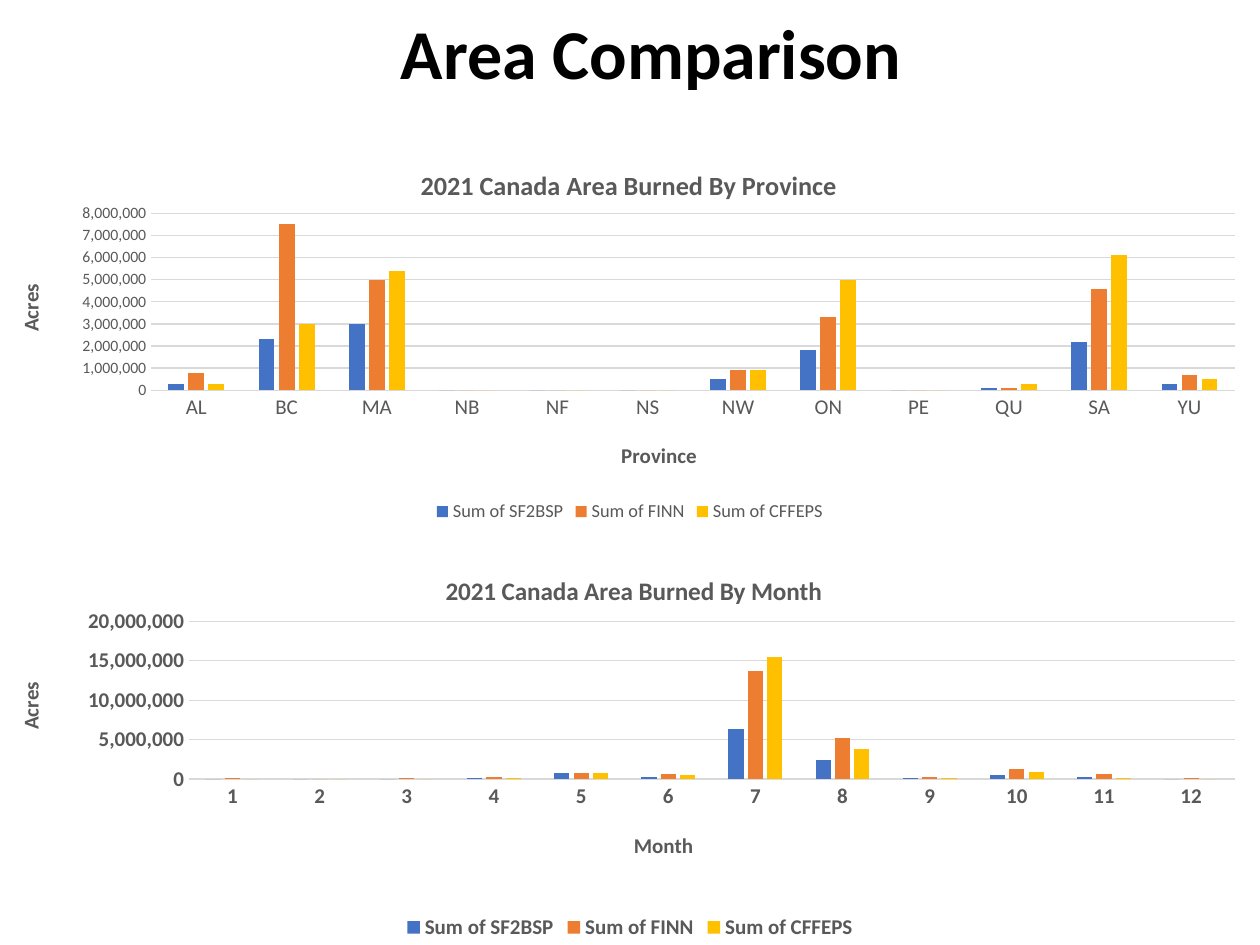
"""Build a slide comparing burned area by province and by month."""
from lxml import etree
from pptx import Presentation
from pptx import util as u
from pptx.chart import data as chart_data
from pptx.dml.color import RGBColor
from pptx.enum import chart as charts, text
from pptx.oxml.ns import qn

THEME = {
    "font": "Calibri", "black": "000000", "ink": "595959", "line": "D9D9D9",
    "series": ["4472C4", "ED7D31", "FFC000"],
    "title": 40, "rule": 0.75,
}
HEADING = "Area Comparison"
SERIES = ["Sum of SF2BSP", "Sum of FINN", "Sum of CFFEPS"]
UNIT = 100000

CHARTS = [
    {
        "title": "2021 Canada Area Burned By Province", "category": "Province",
        "labels": ["AL", "BC", "MA", "NB", "NF", "NS", "NW", "ON", "PE", "QU", "SA", "YU"],
        "values": [
            [3, 23, 30, 0, 0, 0, 5, 18, 0, 1, 22, 3],
            [8, 75, 50, 0, 0, 0, 9, 33, 0, 1, 46, 7],
            [3, 30, 54, 0, 0, 0, 9, 50, 0, 3, 61, 5],
        ],
        "top": 1.07, "height": 3.12, "step": 1000000, "maximum": 8000000,
        "sizes": {"title": 15, "axis": 12, "category": 12, "value": 9, "legend": 10.5},
        "bold": False,
        "plot": (0.12, 0.2, 0.86, 0.45),
        "title_at": (0.33, 0.07), "category_at": (0.49, 0.77), "value_at": (0.01, 0.37),
    },
    {
        "title": "2021 Canada Area Burned By Month", "category": "Month",
        "labels": [str(month) for month in range(1, 13)],
        "values": [
            [0, 0, 0, 1, 7, 3, 63, 24, 1, 5, 2, 0],
            [1, 0, 1, 2, 7, 6, 137, 52, 3, 13, 6, 1],
            [0, 0, 0, 1, 7, 5, 155, 38, 1, 9, 1, 0],
        ],
        "top": 4.29, "height": 3.21, "step": 5000000, "maximum": 20000000,
        "sizes": {"title": 14.4, "axis": 12, "category": 12, "value": 12, "legend": 12},
        "bold": True,
        "plot": (0.15, 0.2, 0.83, 0.39),
        "title_at": (0.35, 0.07), "category_at": (0.5, 0.71), "value_at": (0.01, 0.34),
    },
]


def style_font(font, size, bold, color=THEME["ink"]):
    font.name, font.size, font.bold = THEME["font"], u.Pt(size), bold
    font.color.rgb = RGBColor.from_string(color)


def style_line(line):
    line.color.rgb = RGBColor.from_string(THEME["line"])
    line.width = u.Pt(THEME["rule"])


def place(element, position, index):
    for old in element.findall(qn("c:layout")):
        element.remove(old)
    layout = etree.Element(qn("c:layout"))
    manual = etree.SubElement(layout, qn("c:manualLayout"))
    settings = [("xMode", "edge"), ("yMode", "edge"), *zip("xywh", position)]
    if len(position) == 4:
        settings.insert(0, ("layoutTarget", "inner"))
    for tag, value in settings:
        etree.SubElement(manual, qn("c:" + tag)).set("val", str(value))
    element.insert(index, layout)


def add_title(owner, wording, size, position):
    title = owner.chart_title if hasattr(owner, "chart_title") else owner.axis_title
    title.text_frame.text = wording
    style_font(title.text_frame.paragraphs[0].runs[0].font, size, True)
    element = title.format.line and title._element
    place(element, position, 1)
    return element


def add_column_chart(page, width, info):
    sizes, bold = info["sizes"], info["bold"]
    data = chart_data.CategoryChartData(number_format="#,##0")
    data.categories = info["labels"]
    for name, values in zip(SERIES, info["values"]):
        data.add_series(name, [value * UNIT for value in values])
    chart = page.shapes.add_chart(
        charts.XL_CHART_TYPE.COLUMN_CLUSTERED, 0, u.Inches(info["top"]),
        width, u.Inches(info["height"]), data).chart
    style_font(chart.font, sizes["legend"], bold)

    plot = chart.plots[0]
    plot.gap_width, plot.overlap, plot.vary_by_categories = 219, -27, False
    for series, color in zip(plot.series, THEME["series"]):
        series.format.fill.solid()
        series.format.fill.fore_color.rgb = RGBColor.from_string(color)

    across, upward = chart.category_axis, chart.value_axis
    for axis, size in ((across, sizes["category"]), (upward, sizes["value"])):
        axis.major_tick_mark = axis.minor_tick_mark = charts.XL_TICK_MARK.NONE
        style_font(axis.tick_labels.font, size, bold)
    style_line(across.format.line)
    upward.format.line.fill.background()
    upward.has_major_gridlines = True
    style_line(upward.major_gridlines.format.line)
    upward.minimum_scale, upward.maximum_scale = 0, info["maximum"]
    upward.major_unit = info["step"]
    upward.tick_labels.number_format = "#,##0"
    upward.tick_labels.number_format_is_linked = False

    add_title(chart, info["title"], sizes["title"], info["title_at"])
    add_title(across, info["category"], sizes["axis"], info["category_at"])
    acres = add_title(upward, "Acres", sizes["axis"], info["value_at"])
    body = acres.find(".//" + qn("a:bodyPr"))
    body.set("rot", "-5400000")
    body.set("vert", "horz")
    place(chart.element.find(".//" + qn("c:plotArea")) if hasattr(chart, "element")
          else chart._chartSpace.find(".//" + qn("c:plotArea")), info["plot"], 0)

    chart.has_legend = True
    chart.legend.position = charts.XL_LEGEND_POSITION.BOTTOM
    chart.legend.include_in_layout = False
    style_font(chart.legend.font, sizes["legend"], bold)


def main():
    deck = Presentation()
    deck.slide_width, deck.slide_height = u.Inches(10), u.Inches(7.5)
    page = deck.slides.add_slide(deck.slide_layouts[5])
    box = page.shapes.title
    box.left, box.top = u.Inches(3.08), u.Inches(-0.27)
    box.width, box.height = u.Inches(5.02), u.Inches(1.45)
    box.text_frame.text = HEADING
    box.text_frame.vertical_anchor = text.MSO_ANCHOR.MIDDLE
    para = box.text_frame.paragraphs[0]
    para.alignment, para.line_spacing = text.PP_ALIGN.LEFT, 0.9
    style_font(para.runs[0].font, THEME["title"], True, THEME["black"])
    for info in CHARTS:
        add_column_chart(page, deck.slide_width, info)
    deck.save("out.pptx")


if __name__ == "__main__":
    main()
